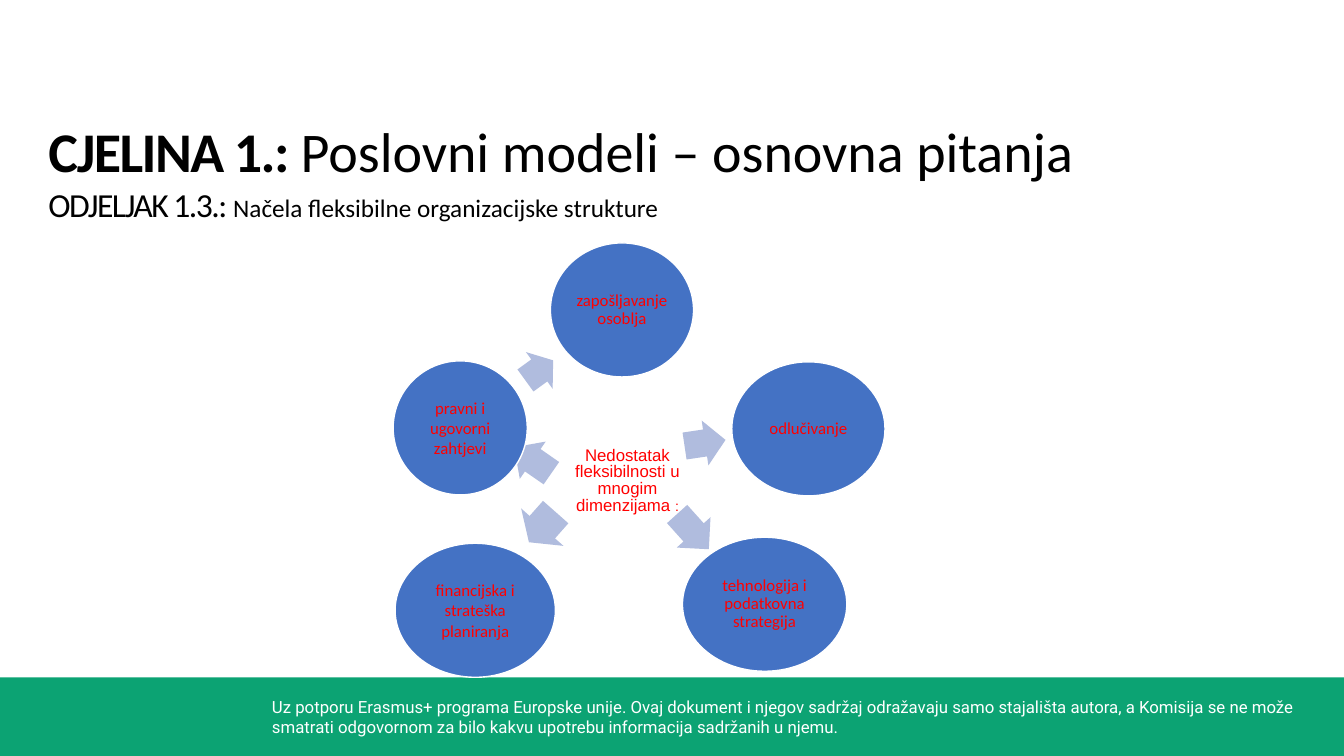
from pptx import Presentation
from pptx import util as u
from pptx.dml.color import RGBColor
from pptx.enum import shapes, text

COLORS = {
    "bar": "0CA373", "circle": "4472C4", "arrow": "B0BCDE",
    "label": "FF0000", "heading": "000000", "light": "FFFFFF",
}


class SlideBuilder:
    """Places styled elements; every length is a percentage of the slide size."""

    def __init__(self, deck):
        self.width, self.height = deck.slide_width, deck.slide_height
        self.slide = deck.slides.add_slide(deck.slide_layouts[5])

    def area(self, left, top, width, height):
        return (round(left * self.width / 100), round(top * self.height / 100),
                round(width * self.width / 100), round(height * self.height / 100))

    def centred(self, x, y, width, height):
        return self.area(x - width / 2, y - height / 2, width, height)

    def font(self, target, size, color, name="Calibri"):
        target.font.size = u.Pt(size)
        target.font.name = name
        target.font.color.rgb = RGBColor.from_string(COLORS[color])

    def shape(self, kind, area, fill, outline=None):
        shape = self.slide.shapes.add_shape(kind, *area)
        shape.shadow.inherit = False
        shape.fill.solid()
        shape.fill.fore_color.rgb = RGBColor.from_string(COLORS[fill])
        if outline:
            shape.line.color.rgb = RGBColor.from_string(COLORS[outline])
            shape.line.width = u.Pt(1)
        else:
            shape.line.fill.background()
        return shape

    def title(self, area, lines):
        """Each line is (lead, rest, lead size, rest size, bold lead)."""
        title = self.slide.shapes.title
        title.left, title.top, title.width, title.height = area
        frame = title.text_frame
        frame.word_wrap = True
        frame.auto_size = text.MSO_AUTO_SIZE.NONE
        frame.vertical_anchor = text.MSO_ANCHOR.TOP
        for number, (lead, rest, lead_size, rest_size, bold) in enumerate(lines):
            line = frame.add_paragraph() if number else frame.paragraphs[0]
            line.alignment = text.PP_ALIGN.LEFT
            line.line_spacing = 1.0
            line.space_before = u.Pt(0)
            for words, size in ((lead, lead_size), (rest, rest_size)):
                run = line.add_run()
                run.text = words
                self.font(run, size, "heading")
                run.font.bold = bold and words == lead
                if words == lead:
                    run._r.get_or_add_rPr().set("spc", "-110")

    def textbox(self, area):
        frame = self.slide.shapes.add_textbox(*area).text_frame
        frame.word_wrap = True
        return frame.paragraphs[0]

    def footer(self, bar_area, note_area, note):
        self.shape(shapes.MSO_SHAPE.RECTANGLE, bar_area, "bar")
        paragraph = self.textbox(note_area)
        paragraph.text = note
        self.font(paragraph, 12, "light", "Roboto")

    def arrow(self, x, y, width, height, angle):
        arrow = self.shape(shapes.MSO_SHAPE.RIGHT_ARROW,
                           self.centred(x, y, width, height), "arrow")
        arrow.adjustments[0], arrow.adjustments[1] = 0.6, 0.5
        arrow.rotation = angle

    def circle(self, label, x, y, width, spacing):
        circle = self.shape(shapes.MSO_SHAPE.OVAL,
                            self.centred(x, y, width, 17.73), "circle", "light")
        frame = circle.text_frame
        frame.word_wrap = True
        frame.vertical_anchor = text.MSO_ANCHOR.MIDDLE
        frame.margin_left = frame.margin_right = u.Inches(0.02)
        frame.margin_top = frame.margin_bottom = u.Inches(0.02)
        paragraph = frame.paragraphs[0]
        paragraph.text = label
        paragraph.alignment = text.PP_ALIGN.CENTER
        paragraph.line_spacing = spacing
        self.font(paragraph, 12, "label")

    def hub(self, area, words, mark):
        paragraph = self.textbox(area)
        paragraph.alignment = text.PP_ALIGN.CENTER
        paragraph.line_spacing = u.Pt(12.1)
        for part, size in ((words, 12), (mark, 10)):
            run = paragraph.add_run()
            run.text = part
            self.font(run, size, "label", "Arial")


HEADINGS = [
    ("CJELINA 1.: ", "Poslovni modeli – osnovna pitanja", 40, 40, True),
    ("ODJELJAK 1.3.: ", "Načela fleksibilne organizacijske strukture", 24, 18, False),
]
# circle (label, x, y, width, line spacing), arrow (x, y, width, height, angle)
DIMENSIONS = [
    (("zapošljavanje osoblja", 46.28, 41, 10.65, 0.9), (40.13, 49, 2.55, 6, 324)),
    (("odlučivanje", 60.15, 56.73, 11.4, 0.9), (52.46, 58.6, 3.08, 6, 351.5)),
    (("tehnologija i podatkovna strategija", 56.89, 79.93, 12.23, 0.9),
     (51.56, 70.33, 3.53, 6, 48)),
    (("financijska i strateška planiranja", 35.36, 80.73, 11.93, 1.0),
     (40.35, 69.73, 3, 7.47, 131.5)),
    (("pravni i ugovorni zahtjevi", 34.24, 56.6, 9.98, 1.0),
     (39.64, 60.87, 3.38, 6, 214.8)),
]
SUPPORT_NOTE = (
    "Uz potporu Erasmus+ programa Europske unije. Ovaj dokument i njegov sadržaj "
    "odražavaju samo stajališta autora, a Komisija se ne može smatrati odgovornom "
    "za bilo kakvu upotrebu informacija sadržanih u njemu."
)


def main():
    deck = Presentation()
    deck.slide_width, deck.slide_height = u.Inches(13.33), u.Inches(7.5)
    builder = SlideBuilder(deck)
    builder.footer(builder.area(0, 89.6, 100, 10.4),
                   builder.area(19.5, 91.47, 78.15, 6.67), SUPPORT_NOTE)
    builder.title(builder.area(2.85, 14.8, 96.45, 15.73), HEADINGS)
    for circle, arrow in DIMENSIONS:
        builder.arrow(*arrow)
        builder.circle(*circle)
    builder.hub(builder.area(41.7, 58.53, 9.98, 8.13),
                "Nedostatak fleksibilnosti u mnogim dimenzijama ", ":")
    deck.save("out.pptx")


if __name__ == "__main__":
    main()
